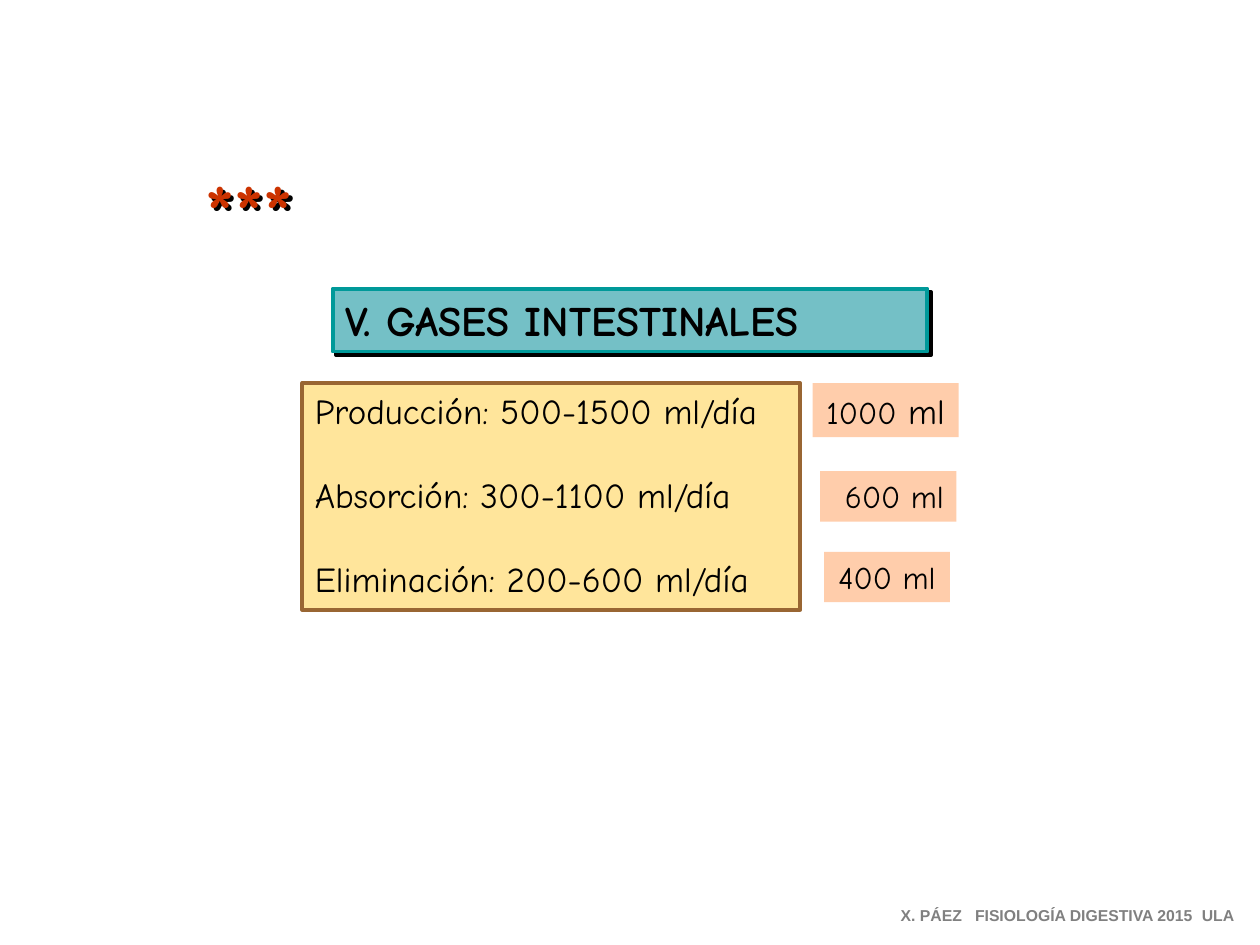
from lxml import etree
from pptx import Presentation
from pptx.dml.color import RGBColor
from pptx.enum.shapes import MSO_SHAPE
from pptx.enum.text import MSO_ANCHOR, MSO_AUTO_SIZE, PP_ALIGN
from pptx.oxml.ns import qn
from pptx.util import Inches, Pt

RECT = MSO_SHAPE.RECTANGLE
TOP = MSO_ANCHOR.TOP
FIXED = MSO_AUTO_SIZE.NONE
LEFT, MID, RIGHT = PP_ALIGN.LEFT, PP_ALIGN.CENTER, PP_ALIGN.RIGHT
FONT = "Comic Neue"
HEX = {
    "black": "000000", "red": "CC3300", "gray": "808080", "sand": "FFE59B",
    "brown": "996633", "aqua": "74C0C6", "teal": "009999", "peach": "FFCDAB",
}

TITLE = "V. GASES INTESTINALES"
RATES = [
    "Producción: 500-1500 ml/día",
    "Absorción: 300-1100 ml/día",
    "Eliminación: 200-600 ml/día",
]
MEANS = [
    ([("1000", 18), (" ml", 20)], (6.45, 3.04, 1.16, 0.43), MID),
    ([("600 ml", 18)], (6.51, 3.74, 1.08, 0.4), RIGHT),
    ([("400 ml", 18)], (6.54, 4.38, 1, 0.4), MID),
]
CREDIT = "X. PÁEZ\tFISIOLOGÍA DIGESTIVA 2015\tULA"
STOPS = [0.59, 2.39]


def color(name):
    return RGBColor.from_string(HEX[name])


def place(shape, box):
    shape.left, shape.top, shape.width, shape.height = map(Inches, box)


def paint(shape, fill, line=None):
    shape.fill.solid()
    shape.fill.fore_color.rgb = color(fill)
    if line:
        shape.line.color.rgb = color(line)
        shape.line.width = Pt(2.25)
    else:
        shape.line.fill.background()


def panel(box, fill, line=None):
    shape = slide.shapes.add_shape(RECT, *map(Inches, box))
    shape.shadow.inherit = False
    paint(shape, fill, line)
    return shape


def label(box):
    return slide.shapes.add_textbox(*map(Inches, box))


def add_tabs(para, stops):
    tabs = etree.SubElement(para._p.get_or_add_pPr(), qn("a:tabLst"))
    for stop in stops:
        etree.SubElement(tabs, qn("a:tab"), pos=str(Inches(stop)), algn="l")


def write(shape, lines, size, tint="black", bold=False, align=LEFT, face=FONT,
          gap=0, stops=()):
    frame = shape.text_frame
    frame.word_wrap = True
    frame.auto_size = FIXED
    frame.vertical_anchor = TOP
    frame.text = "\n".join(lines)
    for row, para in enumerate(frame.paragraphs):
        if stops:
            add_tabs(para, stops)
        para.alignment = align
        para.space_before = Pt(gap if row else 0)
        font = para.font
        font.name, font.size, font.bold = face, Pt(size), bold
        font.color.rgb = color(tint)
    return frame.paragraphs[0]


def shade(shape):
    shape.shadow.inherit = False
    glow = shape._element.spPr.find(qn("a:effectLst"))
    drop = etree.SubElement(glow, qn("a:outerShdw"), dist=str(Pt(2.8)),
                            dir="2700000", algn="ctr", rotWithShape="0")
    etree.SubElement(drop, qn("a:srgbClr"), val=HEX["black"])


deck = Presentation()
deck.slide_width, deck.slide_height = Inches(10), Inches(7.5)
slide = deck.slides.add_slide(deck.slide_layouts[5])

title = slide.shapes.title
place(title, (2.64, 2.29, 4.72, 0.5))
paint(title, "aqua", "teal")
write(title, [TITLE], 24, bold=True)
shade(title)

stars = label((1.53, 1.24, 1.18, 0.84))
write(stars, ["***"], 44, "red", True)
shade(stars)

write(panel((2.4, 3.04, 3.95, 1.8), "sand", "brown"), RATES, 20, gap=24)

for parts, box, align in MEANS:
    para = write(panel(box, "peach"), [""], 18, align=align)
    for text, size in parts:
        run = para.add_run()
        run.text = text
        run.font.size = Pt(size)

write(label((7.05, 7.14, 2.9, 0.25)), [CREDIT], 9, "gray", True,
      face="Arial", stops=STOPS)

deck.save("out.pptx")
